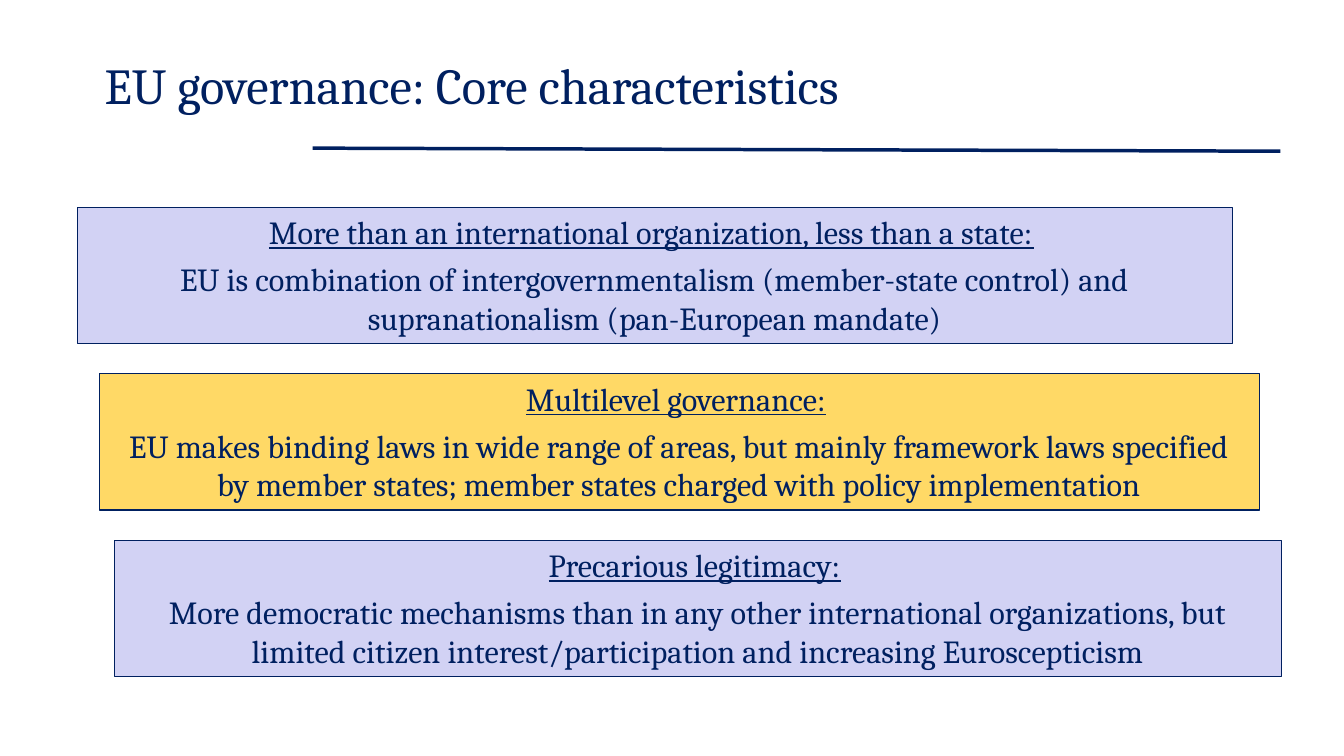
from lxml import etree
from pptx import Presentation, util as u
from pptx.dml.color import RGBColor
from pptx.enum import shapes, text
from pptx.oxml.ns import qn

# Content
TITLE = "EU governance: Core characteristics"
FONT = "Cambria"
HEX = {"navy": "002060", "lilac": "D2D2F4", "gold": "FFC000"}
# left, width, fill, opacity in percent, heading, body
BOXES = [
    (77, 1145, "lilac", 100,
     "More than an international organization, less than a state:",
     "EU is combination of intergovernmentalism (member-state control) "
     "and supranationalism (pan-European mandate)"),
    (99, 1150, "gold", 60,
     "Multilevel governance:",
     "EU makes binding laws in wide range of areas, but mainly framework laws "
     "specified by member states; member states charged with policy implementation"),
    (114, 1157, "lilac", 100,
     "Precarious legitimacy:",
     "More democratic mechanisms than in any other international organizations, "
     "but limited citizen interest/participation and increasing Euroscepticism"),
]
TOP, HIGH, STEP = 206, 135, 165
PX = 9144  # 100 px to the inch


def px(*vals):
    return [u.Emu(v * PX) for v in vals]


def color(name):
    return RGBColor.from_string(HEX[name])


def style(para, size):
    para.font.size = u.Pt(size)
    para.font.name = FONT
    para.font.color.rgb = color("navy")


def stroke(item, width):
    item.line.color.rgb = color("navy")
    item.line.width = u.Pt(width)


def add_box(slide, row, left, width, fill, alpha, head, body):
    box = slide.shapes.add_shape(shapes.MSO_SHAPE.RECTANGLE,
                                 *px(left, TOP + row * STEP, width, HIGH))
    box.shadow.inherit = False
    box.fill.solid()
    box.fill.fore_color.rgb = color(fill)
    if alpha < 100:
        tone = box._element.spPr.find(".//" + qn("a:srgbClr"))
        etree.SubElement(tone, qn("a:alpha"), val=str(alpha * 1000))
    stroke(box, 0.75)
    frame = box.text_frame
    frame.word_wrap = True
    frame.auto_size = text.MSO_AUTO_SIZE.SHAPE_TO_FIT_TEXT
    frame.vertical_anchor = text.MSO_ANCHOR.TOP
    first, second = frame.paragraphs[0], frame.add_paragraph()
    run = first.add_run()
    run.text = head
    run.font.underline = True
    first.add_run().text = " "
    second.text = body
    for para in (first, second):
        style(para, 23)
        para.alignment = text.PP_ALIGN.CENTER
        para.space_before = u.Pt(6)


def main():
    prs = Presentation()
    prs.slide_width, prs.slide_height = px(1333, 750)
    slide = prs.slides.add_slide(prs.slide_layouts[6])

    # Title
    frame = slide.shapes.add_textbox(*px(94, 21, 1159, 125)).text_frame
    frame.word_wrap = True
    frame.vertical_anchor = text.MSO_ANCHOR.MIDDLE
    frame.text = TITLE
    style(frame.paragraphs[0], 36)

    # Rule under the title
    rule = slide.shapes.add_connector(shapes.MSO_CONNECTOR.STRAIGHT,
                                      *px(310, 147, 1270, 150))
    stroke(rule, 2.5)
    etree.SubElement(rule._element.spPr, qn("a:effectLst"))

    # Characteristics
    for row, box in enumerate(BOXES):
        add_box(slide, row, *box)

    prs.save("out.pptx")


if __name__ == "__main__":
    main()
